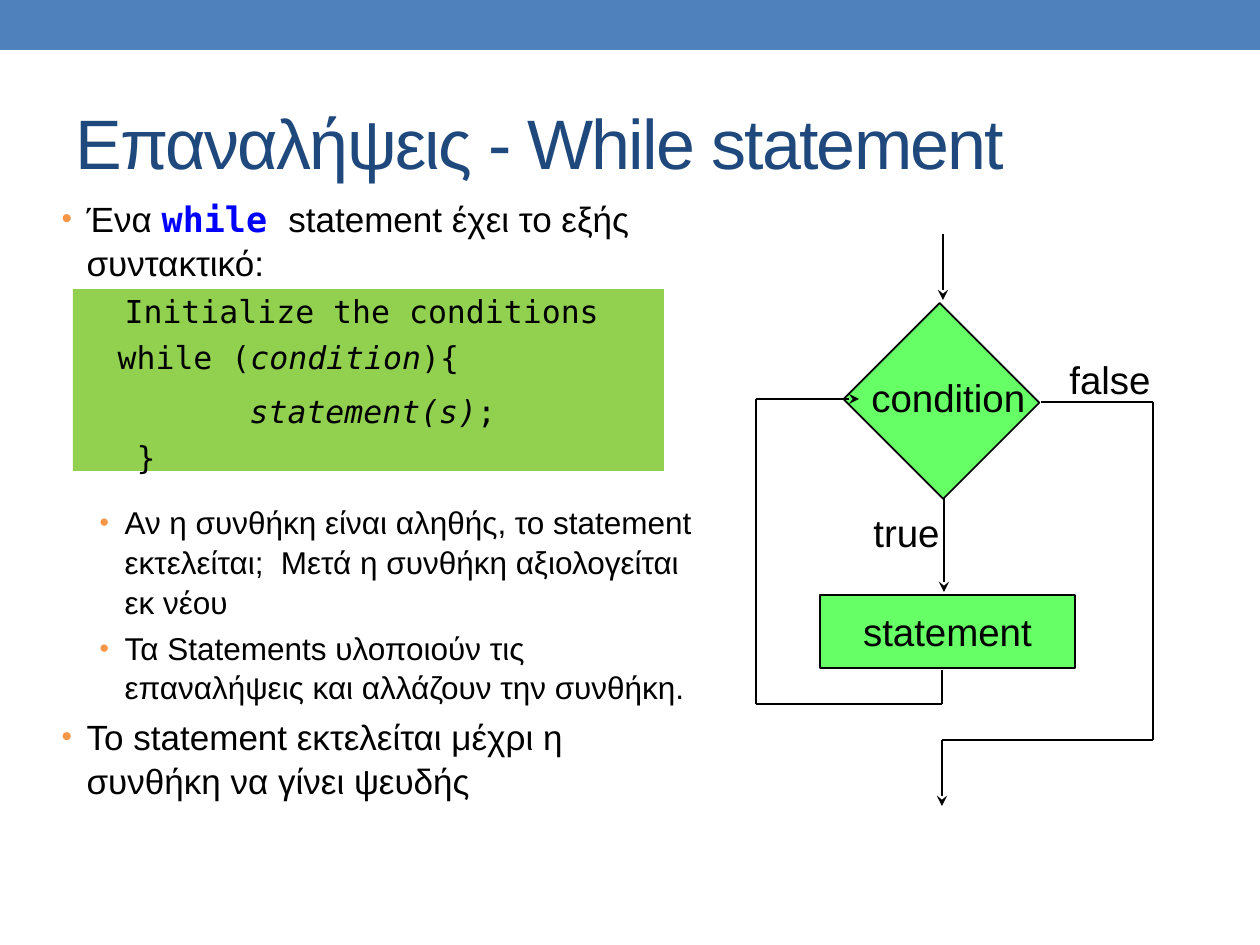
from dataclasses import dataclass
from itertools import pairwise

from lxml.etree import SubElement
from pptx import Presentation
from pptx.dml.color import RGBColor
from pptx.enum.shapes import MSO_CONNECTOR, MSO_SHAPE
from pptx.enum.text import MSO_ANCHOR, MSO_AUTO_SIZE, PP_ALIGN
from pptx.oxml.ns import qn
from pptx.util import Emu, Pt

PX = 914400 // 126


@dataclass(frozen=True)
class Theme:
    sans: str = "Arial"
    mono: str = "DejaVu Sans Mono"
    ink: str = "000000"
    band: str = "4F81BD"
    title: str = "1F497D"
    keyword: str = "0000FF"
    bullet: str = "F79646"
    code_fill: str = "92D050"
    node_fill: str = "66FF66"
    title_size: int = 40
    main_size: int = 20
    sub_size: int = 18
    node_size: int = 22
    line_width: int = 1


THEME = Theme()

# Content
TITLE = "Επαναλήψεις - While statement"

# Run styles: font, colour, bold, italic
PLAIN = (THEME.sans, THEME.ink, False, False)
KEYWORD = (THEME.mono, THEME.keyword, True, False)
CODE = (THEME.mono, THEME.ink, False, False)
CODE_ITALIC = (THEME.mono, THEME.ink, False, True)

# Paragraph kinds: level, size, left margin in px, bulleted
MAIN = (0, THEME.main_size, 25, True)
SUB = (1, THEME.sub_size, 63, True)


def code_line(margin):
    return (0, THEME.sub_size, margin, False)


# Kind, space before, space after, runs
BODY = [
    (MAIN, 4, 0, [("Ένα ", PLAIN), ("while ", KEYWORD),
                  ("statement έχει το εξής συντακτικό:", PLAIN)]),
    (code_line(63), 3.6, 0, [("Initialize the conditions", CODE)]),
    (code_line(56), 3.6, 4.5, [("while (", CODE), ("condition", CODE_ITALIC), ("){", CODE)]),
    (code_line(188), 3.6, 0, [("statement(s)", CODE_ITALIC), (";", CODE)]),
    (code_line(75), 3.6, 0, [("}", CODE)]),
    (SUB, 15, 0, [("Αν η συνθήκη είναι αληθής, το statement εκτελείται;  "
                   "Μετά η συνθήκη αξιολογείται εκ νέου", PLAIN)]),
    (SUB, 3.6, 0, [("Τα Statements υλοποιούν τις επαναλήψεις και "
                    "αλλάζουν την συνθήκη.", PLAIN)]),
    (MAIN, 4, 0, [("Το statement εκτελείται μέχρι η συνθήκη να γίνει ψευδής", PLAIN)]),
]

# Places in px: left, top, width, height
BAND_BOX = (0, 0, 1260, 50)
TITLE_BOX = (63, 73, 1134, 136)
BODY_BOX = (49, 189, 659, 683)
CODE_BOX = (73, 289, 591, 182)
STATEMENT_BOX = (820, 595, 255, 73)
CONDITION_BOX = (871, 333, 141, 136)
FLOW_LABELS = [
    ("condition", (859, 368, 181, 59)),
    ("false", (1057, 350, 108, 59)),
    ("true", (861, 503, 93, 59)),
]

# Flow routes in px; each ends in an arrowhead
FLOW_ROUTES = [
    [(943, 234), (943, 300)],
    [(944, 498), (944, 592)],
    [(942, 670), (942, 704), (756, 704), (756, 399), (859, 399)],
    [(1041, 402), (1153, 402), (1153, 740), (942, 740), (942, 806)],
]


def px(values):
    return [Emu(value * PX) for value in values]


def colour(code):
    return RGBColor.from_string(code)


def place(part, box):
    part.left, part.top, part.width, part.height = px(box)


def add_run(paragraph, text, size, style=PLAIN):
    run = paragraph.add_run()
    run.text = text
    font = run.font
    font.size = Pt(size)
    font.name, code, font.bold, font.italic = style
    font.color.rgb = colour(code)
    return run


def add_block(slide, box, fill, outlined=False):
    block = slide.shapes.add_shape(MSO_SHAPE.RECTANGLE, *px(box))
    block.shadow.inherit = False
    block.fill.solid()
    block.fill.fore_color.rgb = colour(fill)
    if outlined:
        block.line.color.rgb = colour(THEME.ink)
        block.line.width = Pt(THEME.line_width)
    else:
        block.line.fill.background()
    return block


def send_to_back(slide, *parts):
    tree = slide.shapes._spTree
    for position, part in enumerate(parts, start=2):
        tree.insert(position, part._element)


def add_route(slide, points):
    for start, end in pairwise(points):
        leg = slide.shapes.add_connector(MSO_CONNECTOR.STRAIGHT, *px(start + end))
        leg.line.color.rgb = colour(THEME.ink)
        leg.line.width = Pt(THEME.line_width)
        SubElement(leg._element.spPr, qn("a:effectLst"))
    SubElement(leg.line._get_or_add_ln(), qn("a:tailEnd"), type="stealth")


def format_paragraph(paragraph, margin, bulleted):
    props = paragraph._p.get_or_add_pPr()
    props.set("marL", str(margin * PX))
    props.set("indent", str(-25 * PX if bulleted else 0))
    if not bulleted:
        SubElement(props, qn("a:buNone"))
        return
    bullet_colour = SubElement(props, qn("a:buClr"))
    SubElement(bullet_colour, qn("a:srgbClr"), val=THEME.bullet)
    SubElement(props, qn("a:buSzPct"), val="85000")
    SubElement(props, qn("a:buFont"), typeface=THEME.sans)
    SubElement(props, qn("a:buChar"), char="•")


def fill_title(title):
    place(title, TITLE_BOX)
    frame = title.text_frame
    frame.auto_size = MSO_AUTO_SIZE.NONE
    frame.vertical_anchor = MSO_ANCHOR.MIDDLE
    paragraph = frame.paragraphs[0]
    paragraph.alignment = PP_ALIGN.LEFT
    style = (THEME.sans, THEME.title, False, False)
    run = add_run(paragraph, TITLE, THEME.title_size, style)
    run.font._element.set("spc", "-100")


def fill_body(body):
    place(body, BODY_BOX)
    frame = body.text_frame
    frame.auto_size = MSO_AUTO_SIZE.NONE
    for index, (kind, before, after, runs) in enumerate(BODY):
        level, size, margin, bulleted = kind
        paragraph = frame.add_paragraph() if index else frame.paragraphs[0]
        paragraph.level = level
        paragraph.line_spacing = 1.05
        paragraph.space_before, paragraph.space_after = Pt(before), Pt(after)
        format_paragraph(paragraph, margin, bulleted)
        for text, style in runs:
            add_run(paragraph, text, size, style)


def add_flowchart(slide):
    # Nodes
    statement = add_block(slide, STATEMENT_BOX, THEME.node_fill, outlined=True)
    statement.text_frame.vertical_anchor = MSO_ANCHOR.MIDDLE
    paragraph = statement.text_frame.paragraphs[0]
    paragraph.alignment = PP_ALIGN.CENTER
    add_run(paragraph, "statement", THEME.node_size)
    condition = add_block(slide, CONDITION_BOX, THEME.node_fill, outlined=True)
    condition.rotation = 45
    # Labels and routes
    for text, box in FLOW_LABELS:
        label = slide.shapes.add_textbox(*px(box))
        label.text_frame.word_wrap = False
        add_run(label.text_frame.paragraphs[0], text, THEME.node_size)
    for points in FLOW_ROUTES:
        add_route(slide, points)


def main():
    deck = Presentation()
    deck.slide_width, deck.slide_height = px((1260, 945))
    slide = deck.slides.add_slide(deck.slide_layouts[1])
    fill_title(slide.shapes.title)
    fill_body(slide.placeholders[1])
    band = add_block(slide, BAND_BOX, THEME.band)
    code_panel = add_block(slide, CODE_BOX, THEME.code_fill)
    send_to_back(slide, band, code_panel)
    add_flowchart(slide)
    deck.save("out.pptx")


if __name__ == "__main__":
    main()
